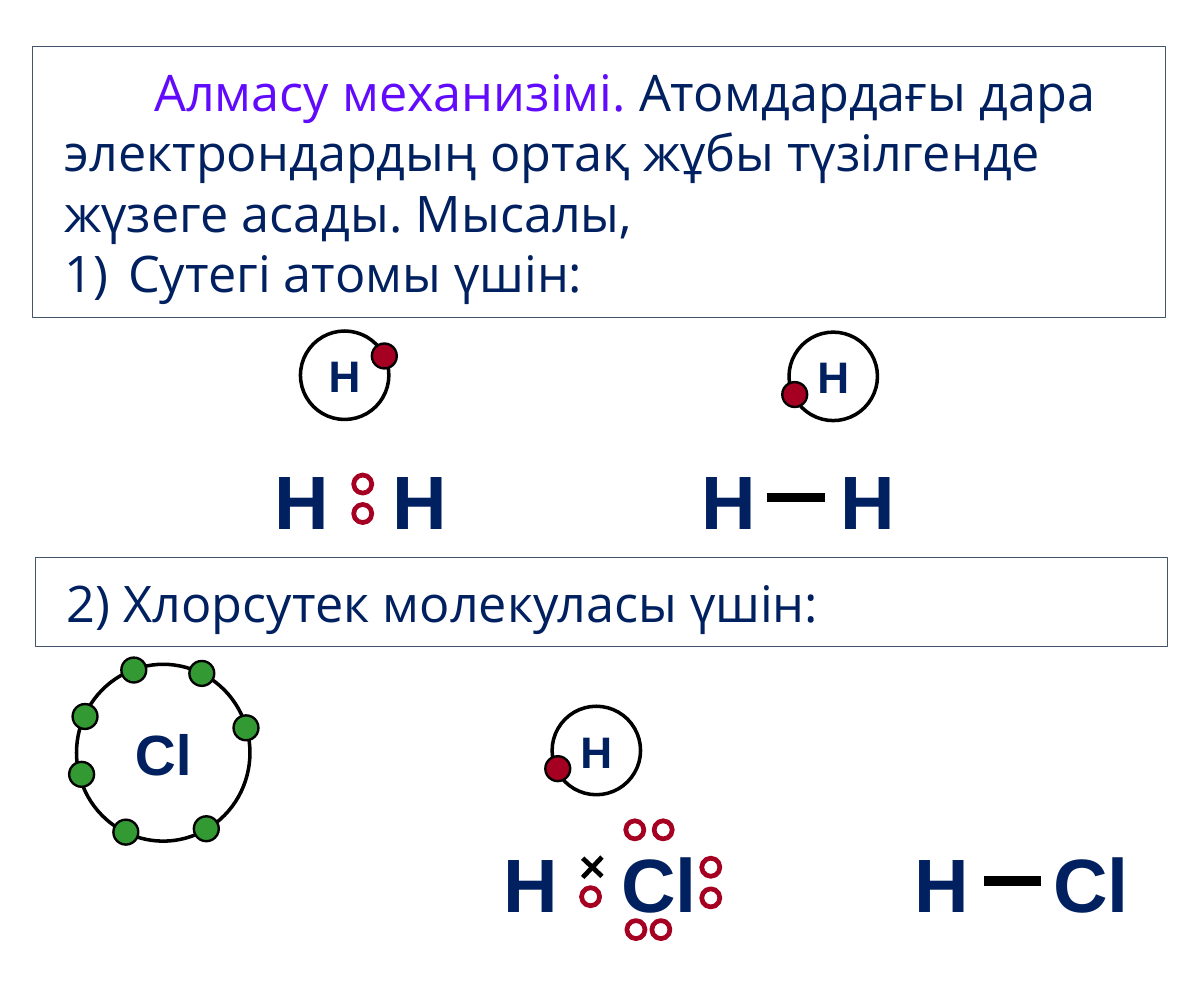
from dataclasses import dataclass

from lxml import etree
from pptx import Presentation
from pptx import util as u
from pptx.dml.color import RGBColor
from pptx.enum import shapes, text
from pptx.oxml import ns

# Content: lengths in px, 100 px to the inch
PX = 9144
SLIDE_SIZE = (1062, 875)


@dataclass(frozen=True)
class Theme:
    navy: str = "002060"
    violet: str = "620BFC"
    red: str = "A50021"
    green: str = "339933"
    black: str = "000000"
    frame: str = "44546A"
    body_font: str = "Open Sans"
    symbol_font: str = "Arial"
    body_size: int = 32
    hydrogen_size: int = 28
    chlorine_size: int = 36
    formula_size: int = 48


THEME = Theme()

# Each panel: box, then paragraphs of (runs, left margin, first-line indent, numbering)
PANELS = [
    ((29, 41, 999, 239), [
        ([("Алмасу механизімі. ", THEME.violet),
          ("Атомдардағы дара электрондардың ортақ жұбы түзілгенде "
           "жүзеге асады. Мысалы,", THEME.navy)], 0, 79, None),
        ([("Сутегі атомы үшін:", THEME.navy)], 56, -56, "arabicParenR"),
    ]),
    ((31, 492, 999, 78), [
        ([("2) Хлорсутек молекуласы үшін:", THEME.navy)], 0, 0, None),
    ]),
]

# Each atom: symbol, type size, centre, size, electron colour, electron offsets from centre
HYDROGEN = ("H", THEME.hydrogen_size)
ATOMS = [
    (*HYDROGEN, (304, 331), (78, 78), THEME.red, [(35, -17)]),
    (*HYDROGEN, (735, 332), (78, 78), THEME.red, [(-34, 16)]),
    (*HYDROGEN, (526, 662), (78, 78), THEME.red, [(-34, 16)]),
    ("Cl", THEME.chlorine_size, (144, 664), (153, 156), THEME.green,
     [(-72, 19), (-26, -73), (38, 67), (34, -70), (-69, -32), (-33, 70), (73, -22)]),
]
ELECTRON = 22

# Each formula symbol: text, left, top
FORMULA_SYMBOLS = [
    ("H", 242, 400), ("H", 346, 400), ("H", 619, 400), ("H", 741, 400),
    ("H", 444, 738), ("Cl", 548, 738), ("H", 807, 738), ("Cl", 929, 738),
]
SYMBOL_SIZE = (90, 80)

DOT = 16
DOT_CENTRES = [
    (320, 427), (320, 453),
    (521, 791), (560, 732), (585, 732),
    (627, 765), (627, 792), (561, 820), (583, 820),
]

# Each line: start, end, width in points
LINES = [
    ((677, 439), (728, 439), 6), ((868, 777), (918, 777), 6),
    ((514, 774), (531, 756), 3), ((514, 757), (531, 773), 3),
]


def emu(*lengths):
    return [length * PX for length in lengths]


def around(centre, size):
    """Return left, top, width and height of a box with this centre."""
    return (centre[0] - size[0] / 2, centre[1] - size[1] / 2, *size)


def add_run(paragraph, content, *, font, size, color, bold=False):
    run = paragraph.add_run()
    run.text = content
    run.font.name = font
    run.font.size = u.Pt(size)
    run.font.bold = bold
    run.font.color.rgb = RGBColor.from_string(color)


def set_insets(frame, horizontal, vertical):
    frame.margin_left = frame.margin_right = horizontal * PX
    frame.margin_top = frame.margin_bottom = vertical * PX


def add_outlined(slide, kind, box, *, line, width, fill=None):
    shape = slide.shapes.add_shape(kind, *[int(value) for value in emu(*box)])
    shape.shadow.inherit = False
    shape.line.color.rgb = RGBColor.from_string(line)
    shape.line.width = u.Pt(width)
    if fill:
        shape.fill.solid()
        shape.fill.fore_color.rgb = RGBColor.from_string(fill)
    else:
        shape.fill.background()
    return shape


def add_panel(slide, box, paragraphs):
    shape = add_outlined(slide, shapes.MSO_SHAPE.RECTANGLE, box,
                         line=THEME.frame, width=0.75)
    frame = shape.text_frame
    frame.word_wrap = True
    frame.vertical_anchor = text.MSO_ANCHOR.MIDDLE
    set_insets(frame, 28, 12)
    for index, (runs, margin, indent, numbering) in enumerate(paragraphs):
        paragraph = frame.add_paragraph() if index else frame.paragraphs[0]
        paragraph.alignment = text.PP_ALIGN.LEFT
        properties = paragraph._p.get_or_add_pPr()
        properties.set("marL", str(margin * PX))
        properties.set("indent", str(indent * PX))
        if numbering:
            etree.SubElement(properties, ns.qn("a:buAutoNum"), type=numbering)
        for content, color in runs:
            add_run(paragraph, content, font=THEME.body_font,
                    size=THEME.body_size, color=color)


def add_atom(slide, symbol, type_size, centre, size, color, offsets):
    oval = shapes.MSO_SHAPE.OVAL
    shell = add_outlined(slide, oval, around(centre, size), line=THEME.black, width=2.25)
    frame = shell.text_frame
    frame.word_wrap = False
    frame.vertical_anchor = text.MSO_ANCHOR.MIDDLE
    set_insets(frame, 0, 0)
    frame.paragraphs[0].alignment = text.PP_ALIGN.CENTER
    add_run(frame.paragraphs[0], symbol, font=THEME.symbol_font,
            size=type_size, color=THEME.navy, bold=True)
    for across, down in offsets:
        place = (centre[0] + across, centre[1] + down)
        add_outlined(slide, oval, around(place, (ELECTRON, ELECTRON)),
                     line=THEME.black, width=1.5, fill=color)


def add_formula_symbol(slide, symbol, left, top):
    frame = slide.shapes.add_textbox(*emu(left, top, *SYMBOL_SIZE)).text_frame
    frame.word_wrap = True
    set_insets(frame, 0, 0)
    add_run(frame.paragraphs[0], symbol, font=THEME.symbol_font,
            size=THEME.formula_size, color=THEME.navy, bold=True)


def add_line(slide, start, end, width):
    line = slide.shapes.add_connector(shapes.MSO_CONNECTOR.STRAIGHT, *emu(*start, *end))
    line.line.color.rgb = RGBColor.from_string(THEME.black)
    line.line.width = u.Pt(width)
    etree.SubElement(line._element.spPr, ns.qn("a:effectLst"))


def main():
    presentation = Presentation()
    presentation.slide_width, presentation.slide_height = emu(*SLIDE_SIZE)
    slide = presentation.slides.add_slide(presentation.slide_layouts[6])
    for panel in PANELS:
        add_panel(slide, *panel)
    for atom in ATOMS:
        add_atom(slide, *atom)
    for symbol in FORMULA_SYMBOLS:
        add_formula_symbol(slide, *symbol)
    for centre in DOT_CENTRES:
        add_outlined(slide, shapes.MSO_SHAPE.OVAL, around(centre, (DOT, DOT)),
                     line=THEME.red, width=3)
    for line in LINES:
        add_line(slide, *line)
    presentation.save("out.pptx")


if __name__ == "__main__":
    main()
